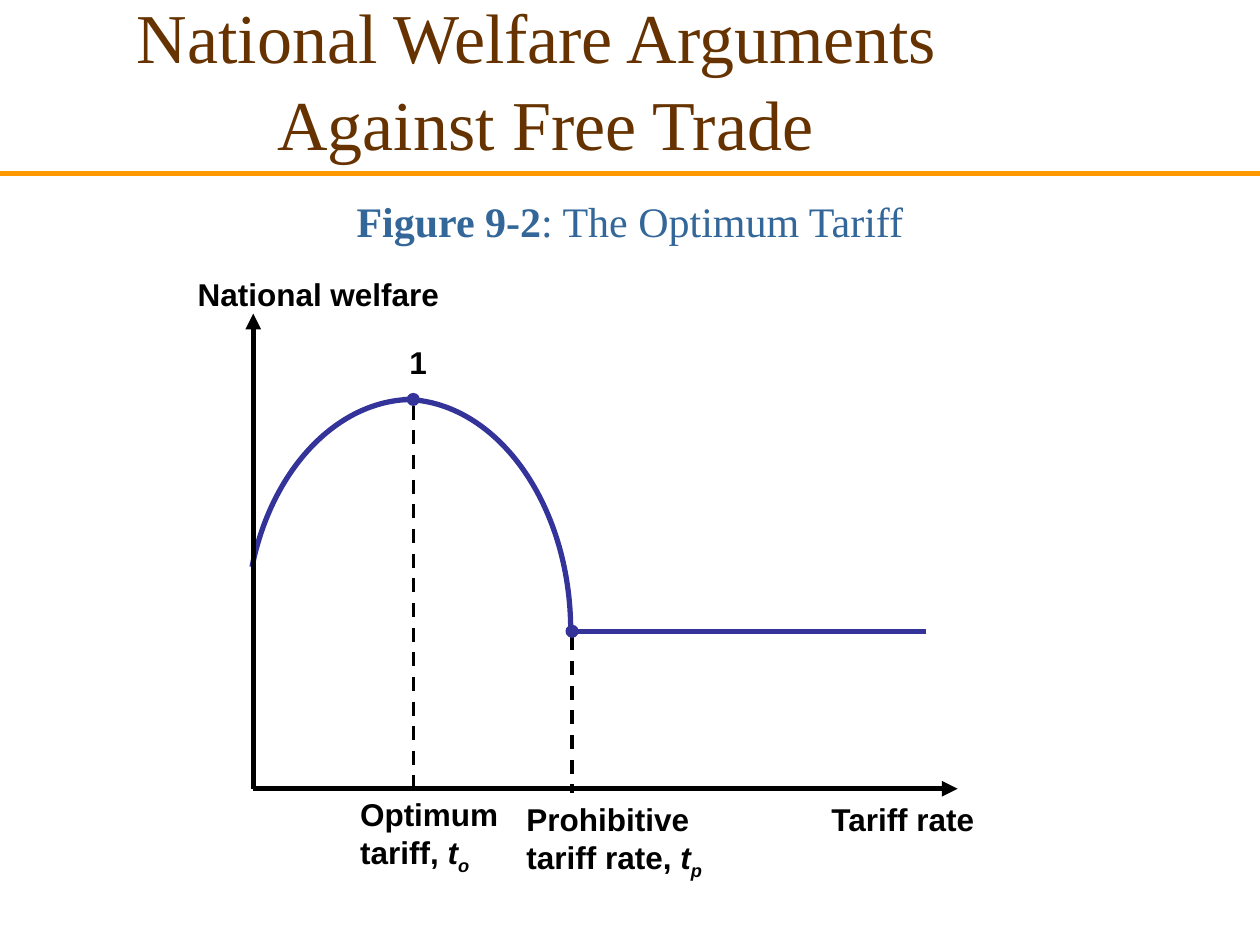
"""Build the optimum tariff slide: a welfare curve over the tariff rate."""
from dataclasses import dataclass

from lxml import etree
from pptx import Presentation
from pptx.dml.color import RGBColor
from pptx.enum.dml import MSO_LINE
from pptx.enum.shapes import MSO_CONNECTOR, MSO_SHAPE
from pptx.enum.text import MSO_ANCHOR, PP_ALIGN
from pptx.oxml.ns import qn
from pptx.slide import Slide
from pptx.util import Inches, Pt

Point = tuple[float, float]


@dataclass(frozen=True)
class Theme:
    title: str = "663300"
    caption: str = "336699"
    curve: str = "333399"
    rule: str = "FF9900"
    ink: str = "000000"
    serif: str = "Times New Roman"
    sans: str = "Arial"
    title_size: int = 40
    caption_size: int = 24
    label_size: int = 18
    thick: int = 3
    thin: int = 2


@dataclass(frozen=True)
class Run:
    text: str
    bold: bool = False
    italic: bool = False
    subscript: bool = False


@dataclass(frozen=True)
class TextStyle:
    font: str
    size: int
    color: str
    align: PP_ALIGN = PP_ALIGN.LEFT
    anchor: MSO_ANCHOR = MSO_ANCHOR.TOP
    space_before: int = 0


@dataclass(frozen=True)
class Text:
    box: tuple[float, float, float, float]
    paragraphs: list[list[Run]]
    style: TextStyle
    wrap: bool = True


@dataclass(frozen=True)
class Line:
    start: Point
    end: Point
    color: str
    width: int = 3
    dashed: bool = False
    arrow: bool = False


THEME = Theme()
LABEL = TextStyle(THEME.sans, THEME.label_size, THEME.ink)
CAPTION = TextStyle(THEME.serif, THEME.caption_size, THEME.caption,
                    PP_ALIGN.CENTER, MSO_ANCHOR.BOTTOM)
TITLE = TextStyle(THEME.serif, THEME.title_size, THEME.title,
                  PP_ALIGN.CENTER, MSO_ANCHOR.MIDDLE, 2)

ORIGIN = (2.01, 6.26)
OPTIMUM = (3.28, 3.17)
PROHIBITIVE = (4.54, 5.01)
DOT_SIZE = 0.09

LINES = [
    Line((0, 1.38), (10, 1.38), THEME.rule, THEME.thick),
    Line((4.52, 5.01), (7.35, 5.01), THEME.curve, THEME.thick),
]
CURVES = [
    [(4.53, 5.01), (4.53, 3.99), (3.93, 3.17), (3.2, 3.17)],
    [(2, 4.5), (2.16, 3.71), (2.69, 3.17), OPTIMUM],
]
AXES_AND_DROPS = [
    Line((2.01, 2.49), ORIGIN, THEME.ink, THEME.thick, arrow=True),
    Line((7.6, 6.26), ORIGIN, THEME.ink, THEME.thick, arrow=True),
    Line((3.28, 3.22), (3.28, 6.3), THEME.ink, THEME.thin, dashed=True),
    Line((4.54, 5.05), (4.54, 6.29), THEME.ink, THEME.thin, dashed=True),
]


def bold_label(text: str) -> list[Run]:
    """Return a paragraph of one bold run."""
    return [Run(text, bold=True)]


def rate_label(text: str, index: str) -> list[Run]:
    """Return a bold paragraph ending in t with a subscript."""
    return [Run(text, True), Run("t", True, True), Run(index, True, True, True)]


TEXTS = [
    Text((3.15, 2.67, 0.34, 0.4), [bold_label("1")], LABEL, False),
    Text((1.47, 2.13, 2.12, 0.4), [bold_label("National welfare")], LABEL, False),
    Text((6.5, 6.3, 1.35, 0.4), [bold_label("Tariff rate")], LABEL, False),
    Text((2.76, 6.26, 1.74, 0.7),
         [bold_label("Optimum"), rate_label("tariff, ", "o")], LABEL),
    Text((4.08, 6.3, 2.08, 0.7),
         [bold_label("Prohibitive"), rate_label("tariff rate, ", "p")], LABEL),
    Text((0, 0.75, 10, 1.25),
         [[Run("Figure 9-2", True), Run(": The Optimum Tariff")]], CAPTION),
    Text((0.08, 0, 8.5, 1.25),
         [[Run("National Welfare Arguments ")], [Run("Against Free Trade")]], TITLE),
]


def draw_line(slide: Slide, line: Line) -> None:
    """Draw a straight line, dashed or with an arrowhead at its start."""
    ends = [Inches(value) for value in (*line.start, *line.end)]
    connector = slide.shapes.add_connector(MSO_CONNECTOR.STRAIGHT, *ends)
    connector.line.color.rgb = RGBColor.from_string(line.color)
    connector.line.width = Pt(line.width)
    if line.dashed:
        connector.line.dash_style = MSO_LINE.DASH
    properties = connector._element.spPr
    if line.arrow:
        head = etree.SubElement(properties.find(qn("a:ln")), qn("a:headEnd"))
        head.set("type", "triangle")
    etree.SubElement(properties, qn("a:effectLst"))


def draw_curve(slide: Slide, points: list[Point]) -> None:
    """Draw a cubic curve from its start, two control points and its end."""
    start, *rest = [(Inches(x), Inches(y)) for x, y in points]
    builder = slide.shapes.build_freeform(*start)
    builder.add_line_segments(rest, close=False)
    curve = builder.convert_to_shape()
    outline = curve._element.find(".//" + qn("a:path"))
    bezier = etree.SubElement(outline, qn("a:cubicBezTo"))
    for segment in outline.findall(qn("a:lnTo")):
        bezier.append(segment[0])
        outline.remove(segment)
    curve.shadow.inherit = False
    curve.fill.background()
    curve.line.color.rgb = RGBColor.from_string(THEME.curve)
    curve.line.width = Pt(THEME.thick)


def draw_dot(slide: Slide, center: Point) -> None:
    """Draw a point marker on the curve."""
    left, top = (Inches(value - DOT_SIZE / 2) for value in center)
    dot = slide.shapes.add_shape(MSO_SHAPE.OVAL, left, top,
                                 Inches(DOT_SIZE), Inches(DOT_SIZE))
    dot.shadow.inherit = False
    dot.fill.solid()
    dot.fill.fore_color.rgb = RGBColor.from_string(THEME.curve)
    dot.line.color.rgb = RGBColor.from_string(THEME.curve)
    dot.line.width = Pt(1)


def draw_text(slide: Slide, text: Text) -> None:
    """Draw a text box with its styled paragraphs."""
    style = text.style
    frame = slide.shapes.add_textbox(*map(Inches, text.box)).text_frame
    frame.word_wrap = text.wrap
    frame.vertical_anchor = style.anchor
    for index, runs in enumerate(text.paragraphs):
        paragraph = frame.paragraphs[0] if index == 0 else frame.add_paragraph()
        paragraph.alignment = style.align
        if index and style.space_before:
            paragraph.space_before = Pt(style.space_before)
        for part in runs:
            run = paragraph.add_run()
            run.text = part.text
            formats = {"name": style.font, "size": Pt(style.size),
                       "bold": part.bold, "italic": part.italic}
            for attribute, value in formats.items():
                setattr(run.font, attribute, value)
            run.font.color.rgb = RGBColor.from_string(style.color)
            if part.subscript:
                run.font._element.set("baseline", "-25000")


def main() -> None:
    """Build and save the slide."""
    deck = Presentation()
    deck.slide_width, deck.slide_height = Inches(10), Inches(7.5)
    slide = deck.slides.add_slide(deck.slide_layouts[6])
    for line in LINES:
        draw_line(slide, line)
    for points in CURVES:
        draw_curve(slide, points)
    for line in AXES_AND_DROPS:
        draw_line(slide, line)
    for center in (OPTIMUM, PROHIBITIVE):
        draw_dot(slide, center)
    for text in TEXTS:
        draw_text(slide, text)
    deck.save("out.pptx")


if __name__ == "__main__":
    main()
